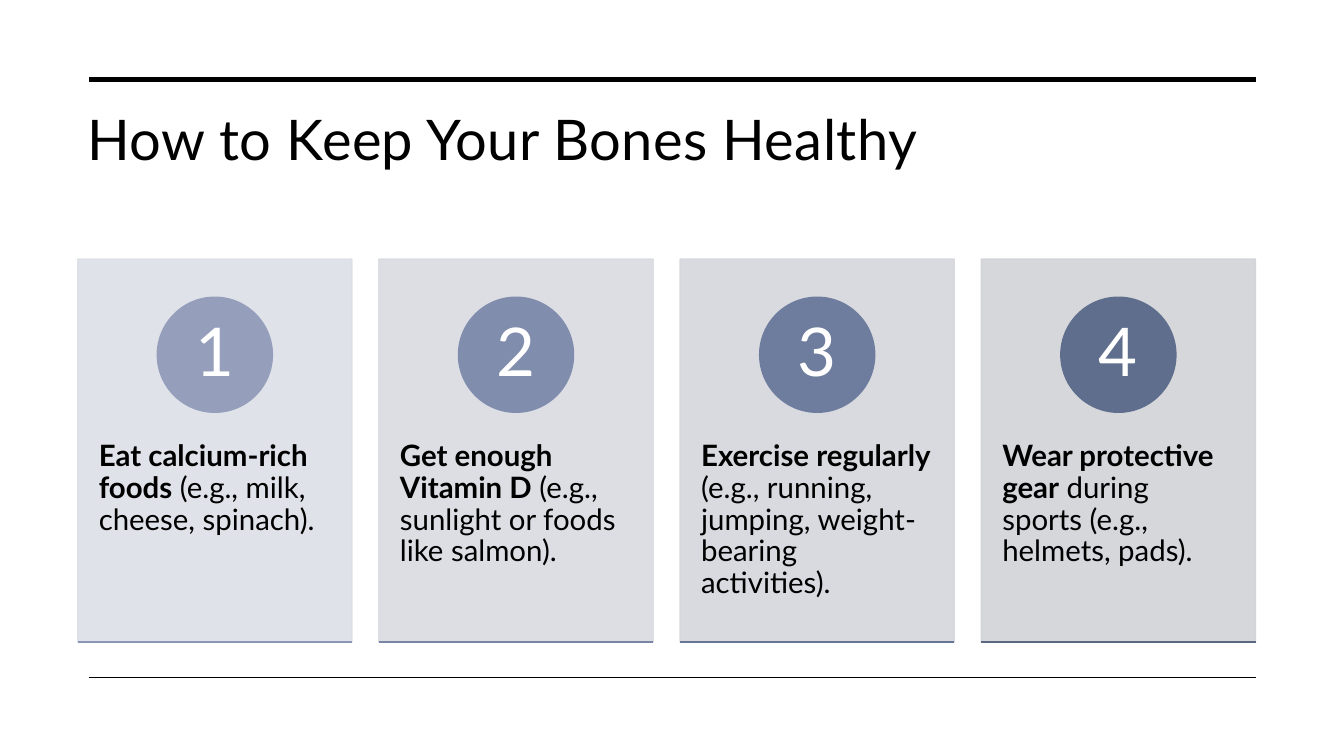
from lxml import etree
from pptx import Presentation
from pptx.dml.color import RGBColor
from pptx.enum.shapes import MSO_CONNECTOR, MSO_SHAPE
from pptx.enum.text import MSO_ANCHOR, PP_ALIGN
from pptx.oxml.ns import qn
from pptx.util import Cm, Pt

STRAIGHT = MSO_CONNECTOR.STRAIGHT
RECTANGLE, OVAL = MSO_SHAPE.RECTANGLE, MSO_SHAPE.OVAL
TOP, MIDDLE = MSO_ANCHOR.TOP, MSO_ANCHOR.MIDDLE
LEFT, CENTER = PP_ALIGN.LEFT, PP_ALIGN.CENTER

BLACK = RGBColor(0x00, 0x00, 0x00)
WHITE = RGBColor(0xFF, 0xFF, 0xFF)
FONT = "Lato"

HEADING = "How to Keep Your Bones Healthy"
TIPS = [
    ("Eat calcium-rich foods", " (e.g., milk, cheese, spinach).",
     RGBColor(0xDD, 0xDF, 0xE7), RGBColor(0x95, 0x9E, 0xBB), RGBColor(0x8B, 0x96, 0xB4)),
    ("Get enough Vitamin D", " (e.g., sunlight or foods like salmon).",
     RGBColor(0xD9, 0xDB, 0xE2), RGBColor(0x81, 0x8D, 0xAD), RGBColor(0x78, 0x85, 0xA6)),
    ("Exercise regularly", " (e.g., running, jumping, weight-bearing activities).",
     RGBColor(0xD5, 0xD7, 0xDD), RGBColor(0x6E, 0x7D, 0x9E), RGBColor(0x66, 0x75, 0x96)),
    ("Wear protective gear", " during sports (e.g., helmets, pads).",
     RGBColor(0xD1, 0xD3, 0xD8), RGBColor(0x5F, 0x6E, 0x8C), RGBColor(0x59, 0x67, 0x81)),
]

CARD_LEFT, CARD_TOP, CARD_WIDTH, CARD_HEIGHT = 1.96, 6.53, 6.91, 9.65
CARD_PITCH = 7.59
BADGE_TOP, BADGE_SIZE = 7.49, 2.9
ADVICE_TOP, ADVICE_HEIGHT = 10.21, 5.79
RULE_LEFT, RULE_RIGHT = 2.24, 31.65


def add_rule(slide, left, right, y, color, width):
    rule = slide.shapes.add_connector(STRAIGHT, Cm(left), Cm(y), Cm(right), Cm(y))
    rule.line.color.rgb = color
    rule.line.width = Pt(width)
    etree.SubElement(rule._element.spPr, qn("a:effectLst"))


def add_solid(slide, kind, left, top, width, height, color):
    solid = slide.shapes.add_shape(kind, Cm(left), Cm(top), Cm(width), Cm(height))
    solid.shadow.inherit = False
    solid.fill.solid()
    solid.fill.fore_color.rgb = color
    solid.line.color.rgb = color
    solid.line.width = Pt(1)
    return solid


def set_opacity(solid, percent):
    for color in solid._element.spPr.iter(qn("a:srgbClr")):
        etree.SubElement(color, qn("a:alpha")).set("val", str(percent * 1000))


def set_frame(frame, anchor, side, end):
    frame.word_wrap = True
    frame.vertical_anchor = anchor
    frame.margin_left = frame.margin_right = Cm(side)
    frame.margin_top = frame.margin_bottom = Cm(end)


def add_run(paragraph, text, size, color, bold=False):
    run = paragraph.add_run()
    run.text = text
    run.font.name = FONT
    run.font.size = Pt(size)
    run.font.bold = bold
    run.font.color.rgb = color
    return run


def add_tip(slide, number, left, lead, detail, card_color, badge_color, base_color):
    card = add_solid(slide, RECTANGLE, left, CARD_TOP, CARD_WIDTH, CARD_HEIGHT, card_color)
    set_opacity(card, 90)

    advice = slide.shapes.add_textbox(
        Cm(left), Cm(ADVICE_TOP), Cm(CARD_WIDTH), Cm(ADVICE_HEIGHT)).text_frame
    set_frame(advice, TOP, 0.53, 0.91)
    sentence = advice.paragraphs[0]
    sentence.line_spacing = 0.9
    add_run(sentence, lead, 21, BLACK, bold=True)
    add_run(sentence, detail, 21, BLACK)

    badge_left = left + (CARD_WIDTH - BADGE_SIZE) / 2
    badge = add_solid(slide, OVAL, badge_left, BADGE_TOP, BADGE_SIZE, BADGE_SIZE, badge_color)
    set_frame(badge.text_frame, MIDDLE, 0.23, 0.03)
    numeral = badge.text_frame.paragraphs[0]
    numeral.alignment = CENTER
    numeral.line_spacing = 0.9
    add_run(numeral, str(number), 48, WHITE)

    add_rule(slide, left, left + CARD_WIDTH, CARD_TOP + CARD_HEIGHT, base_color, 1)


def main():
    deck = Presentation()
    deck.slide_width, deck.slide_height = Cm(33.87), Cm(19.05)
    slide = deck.slides.add_slide(deck.slide_layouts[5])

    title = slide.shapes.title
    title.left, title.top, title.width, title.height = Cm(1.96), Cm(2.51), Cm(29.69), Cm(3.2)
    set_frame(title.text_frame, TOP, 0.25, 0.13)
    heading = title.text_frame.paragraphs[0]
    heading.alignment = LEFT
    heading_run = add_run(heading, HEADING, 40, BLACK)
    heading_run._r.get_or_add_rPr().set("spc", "30")

    add_rule(slide, RULE_LEFT, RULE_RIGHT, 2.01, BLACK, 3.5)
    add_rule(slide, RULE_LEFT, RULE_RIGHT, 17.07, BLACK, 1)
    for index, tip in enumerate(TIPS):
        add_tip(slide, index + 1, CARD_LEFT + index * CARD_PITCH, *tip)

    deck.save("out.pptx")


if __name__ == "__main__":
    main()
